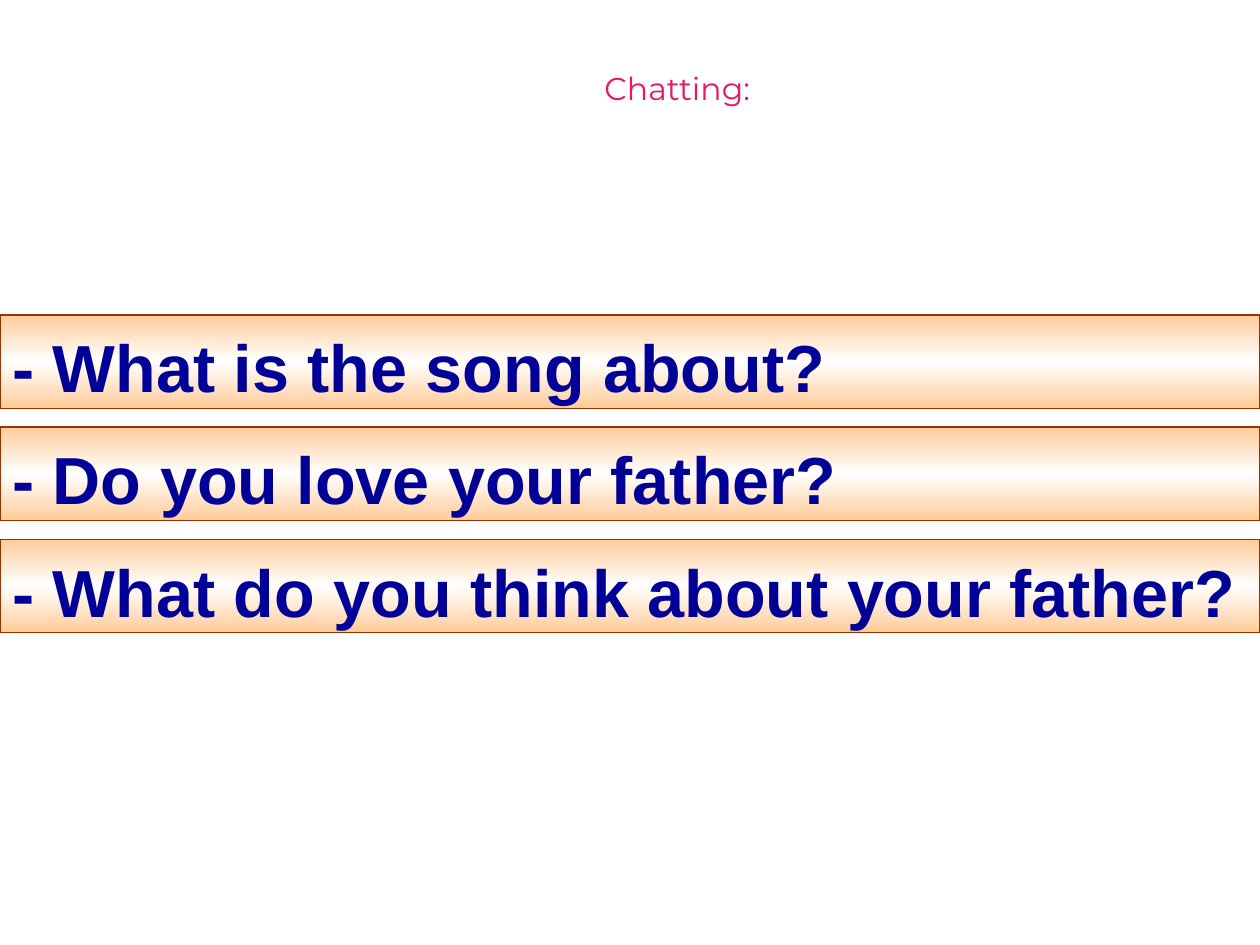
import copy
from dataclasses import dataclass

import pptx
import pptx.dml.color
import pptx.enum.shapes
import pptx.enum.text
import pptx.util
from pptx.util import Inches

COLORS = {
    "title": "E81766",
    "question": "000099",
    "bar_edge": "FFCC99",
    "bar_middle": "FFFFFF",
    "bar_border": "993300",
}
BAR_TOP = 2.5
BAR_HEIGHT = 0.74
BAR_PITCH = 0.89


@dataclass
class Question:
    text: str
    top: float


def rgb(name: str) -> pptx.dml.color.RGBColor:
    return pptx.dml.color.RGBColor.from_string(COLORS[name])


def write_text(frame, text: str, *, font: str, size: float, color: str,
               bold: bool = False, wrap: bool = True,
               align=pptx.enum.text.PP_ALIGN.LEFT) -> None:
    frame.word_wrap = wrap
    frame.vertical_anchor = pptx.enum.text.MSO_ANCHOR.TOP
    paragraph = frame.paragraphs[0]
    paragraph.alignment = align
    run = paragraph.add_run()
    run.text = text
    run.font.name = font
    run.font.size = pptx.util.Pt(size)
    run.font.bold = bold
    run.font.color.rgb = rgb(color)


def fill_with_bands(fill) -> None:
    """Apply a vertical gradient that is light in the middle."""
    fill.gradient()
    fill.gradient_angle = 90
    first_stop = fill.gradient_stops[0]._gs
    first_stop.addnext(copy.deepcopy(first_stop))
    bands = ((0, "bar_edge"), (0.5, "bar_middle"), (1, "bar_edge"))
    for stop, (position, color) in zip(fill.gradient_stops, bands):
        stop.position = position
        stop.color.rgb = rgb(color)


def draw_question(slide, question: Question) -> None:
    bar = slide.shapes.add_shape(
        pptx.enum.shapes.MSO_SHAPE.RECTANGLE,
        Inches(0), Inches(question.top), Inches(10), Inches(BAR_HEIGHT))
    bar.shadow.inherit = False
    fill_with_bands(bar.fill)
    bar.line.color.rgb = rgb("bar_border")
    bar.line.width = pptx.util.Pt(0.75)
    bar.text_frame.margin_top = Inches(0.09)
    bar.text_frame.margin_bottom = Inches(0.04)
    write_text(bar.text_frame, question.text, font="Arial", size=38,
               color="question", bold=True)


def draw_title(slide, text: str) -> None:
    title = slide.shapes.add_textbox(
        Inches(2.75), Inches(0.5), Inches(5.25), Inches(2))
    write_text(title.text_frame, text, font="Montserrat", size=18,
               color="title", wrap=False,
               align=pptx.enum.text.PP_ALIGN.CENTER)


def main() -> None:
    presentation = pptx.Presentation()
    presentation.slide_width = Inches(10)
    presentation.slide_height = Inches(7.5)
    slide = presentation.slides.add_slide(presentation.slide_layouts[6])

    draw_title(slide, "Chatting:")
    wordings = (
        "- What is the song about?",
        "- Do you love your father?",
        "- What do you think about your father?",
    )
    for row, wording in enumerate(wordings):
        draw_question(slide, Question(wording, BAR_TOP + row * BAR_PITCH))

    presentation.save("out.pptx")


if __name__ == "__main__":
    main()
